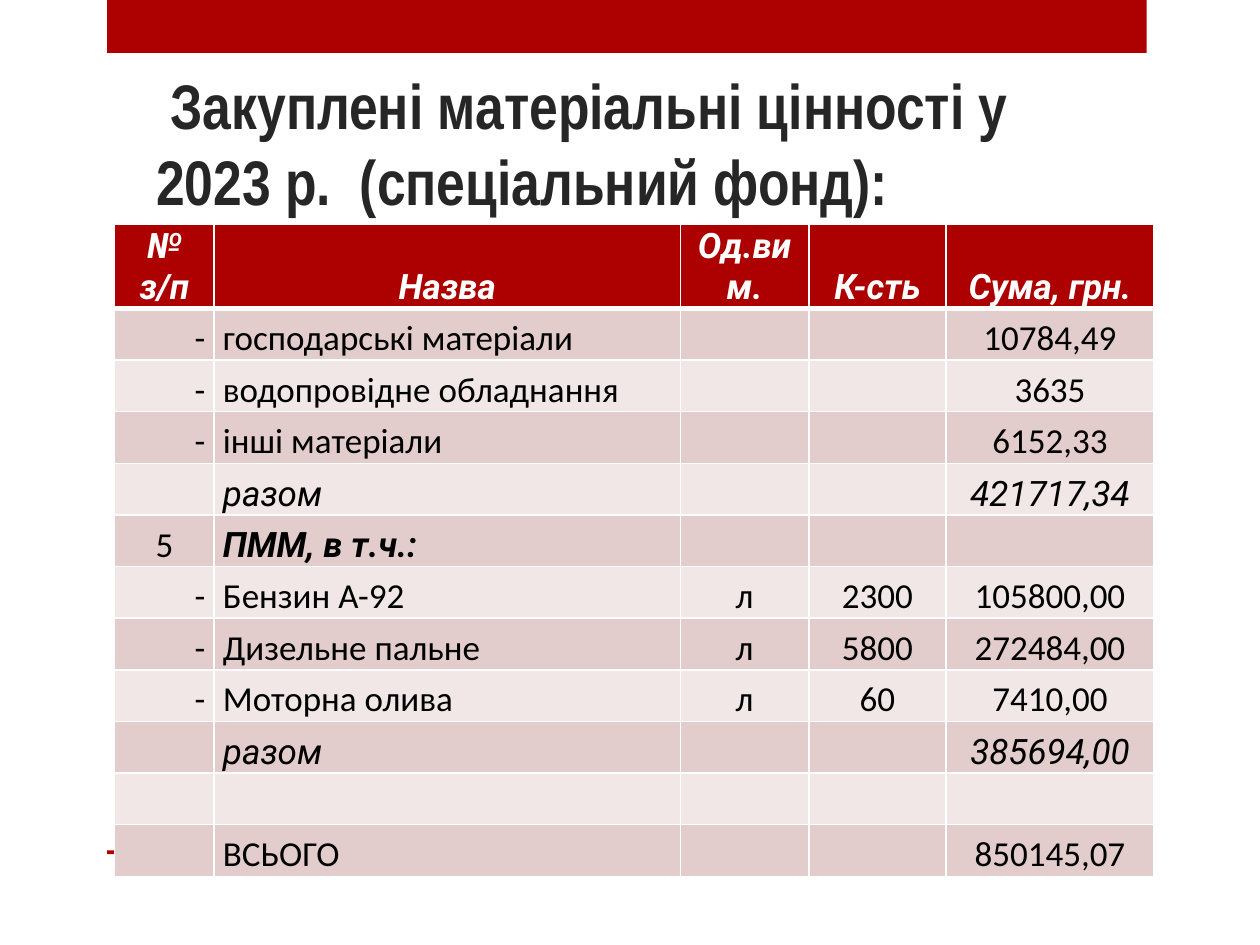
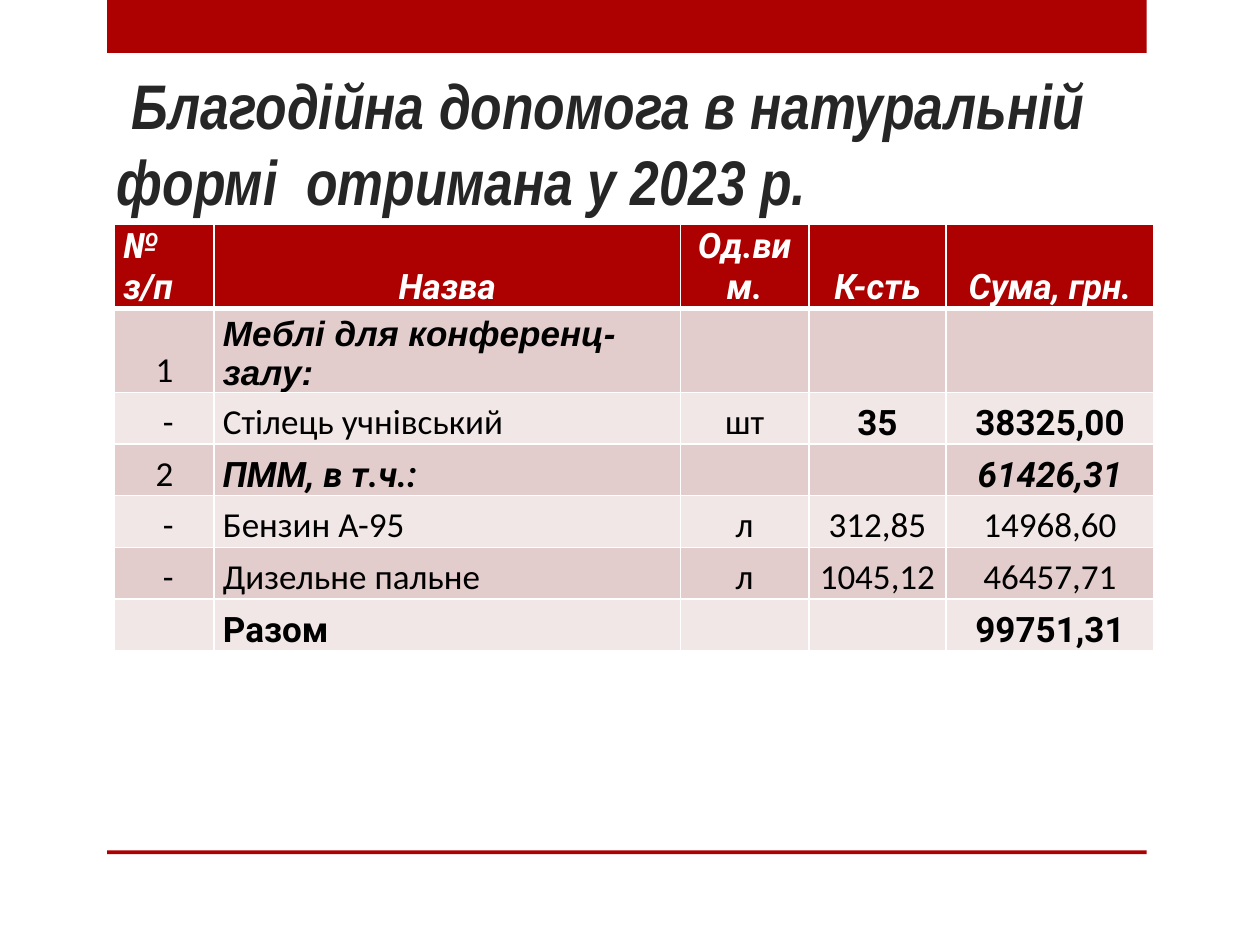
from dataclasses import dataclass

from lxml.etree import SubElement
from pptx import Presentation
from pptx.dml.color import RGBColor
from pptx.enum.shapes import MSO_SHAPE
from pptx.enum.text import MSO_ANCHOR, PP_ALIGN
from pptx.oxml.ns import qn
from pptx.util import Inches, Pt

RED = RGBColor(0xAD, 0x01, 0x01)
WHITE = RGBColor(0xFF, 0xFF, 0xFF)
BLACK = RGBColor(0x00, 0x00, 0x00)
DARK = RGBColor(0x26, 0x26, 0x26)
ROSE = RGBColor(0xE3, 0xCC, 0xCC)
PALE = RGBColor(0xF1, 0xE7, 0xE7)

RECT = MSO_SHAPE.RECTANGLE
LOW = MSO_ANCHOR.BOTTOM
LEFT, MID, RIGHT = PP_ALIGN.LEFT, PP_ALIGN.CENTER, PP_ALIGN.RIGHT

EDGE, WIDTH = 0.85, 8.25
GRID_LEFT, GRID_TOP, ROW_TALL = 0.91, 1.78, 0.41
COLS = (0.79, 3.7, 1.02, 1.09, 1.65)
HEADS = ("№ з/п", "Назва", "Од.вим.", "К-сть", "Сума, грн.")


@dataclass(frozen=True)
class Face:
    font: str
    bold: bool = False
    slant: bool = False


PLAIN = Face("Calibri")
STRONG = Face("Roboto", bold=True)
SLANT = Face("Roboto", slant=True)
HEAD = Face("Roboto", bold=True, slant=True)
ARIAL = Face("Arial", bold=True, slant=True)


@dataclass(frozen=True)
class Row:
    mark: str = ""
    name: str = ""
    unit: str = ""
    count: str = ""
    total: str = ""
    name_face: Face = PLAIN
    count_face: Face = PLAIN
    total_face: Face = PLAIN

    def items(self) -> list:
        return [
            (self.mark, PLAIN),
            (self.name, self.name_face),
            (self.unit, PLAIN),
            (self.count, self.count_face),
            (self.total, self.total_face),
        ]


@dataclass(frozen=True)
class Page:
    title: str
    left: float
    width: float
    face: Face
    head_align: int
    dash_align: int
    rows: tuple


PAGES = (
    Page(
        "Закуплені матеріальні цінності у 2023 р.  (спеціальний фонд):",
        1.14, 7.42, Face("Arial Narrow", bold=True), MID, RIGHT,
        (
            Row(" -", "господарські матеріали", total="10784,49"),
            Row(" -", "водопровідне обладнання", total="3635"),
            Row(" -", "інші матеріали", total="6152,33"),
            Row(name="разом", total="421717,34", name_face=SLANT, total_face=SLANT),
            Row("5", "ПММ, в т.ч.:", name_face=HEAD),
            Row(" -", "Бензин А-92", "л", "2300", "105800,00"),
            Row(" -", "Дизельне пальне", "л", "5800", "272484,00"),
            Row(" -", "Моторна олива", "л", "60", "7410,00"),
            Row(name="разом", total="385694,00", name_face=SLANT, total_face=SLANT),
            Row(),
            Row(name="ВСЬОГО", total="850145,07"),
        ),
    ),
    Page(
        "Благодійна допомога в натуральній формі  отримана у 2023 р.",
        0.83, 8.35, Face("Arial Narrow", bold=True, slant=True), LEFT, MID,
        (
            Row("1", "Меблі для конференц-залу:", name_face=ARIAL),
            Row(" -", "Стілець учнівський", "шт", "35", "38325,00",
                count_face=STRONG, total_face=STRONG),
            Row("2", "ПММ, в т.ч.:", total="61426,31", name_face=HEAD, total_face=HEAD),
            Row(" -", "Бензин А-95", "л", "312,85", "14968,60"),
            Row(" -", "Дизельне пальне", "л", "1045,12", "46457,71"),
            Row(name="Разом", total="99751,31", name_face=STRONG, total_face=STRONG),
        ),
    ),
)


def style(font, face: Face, size: int, color: RGBColor) -> None:
    font.name = face.font
    font.size = Pt(size)
    font.bold = face.bold
    font.italic = face.slant
    font.color.rgb = color


def add_band(slide, top: float, height: float) -> None:
    band = slide.shapes.add_shape(
        RECT, Inches(EDGE), Inches(top), Inches(WIDTH), Inches(height))
    band.shadow.inherit = False
    band.fill.solid()
    band.fill.fore_color.rgb = RED
    band.line.fill.background()


def add_title(slide, page: Page) -> None:
    box = slide.shapes.add_textbox(
        Inches(page.left), Inches(0.52), Inches(page.width), Inches(1.26))
    frame = box.text_frame
    frame.word_wrap = True
    frame.vertical_anchor = LOW
    frame.text = " " + page.title
    style(frame.paragraphs[0].runs[0].font, page.face, 36, DARK)


def add_edges(cell, top: int, base: int) -> None:
    props = cell._tc.get_or_add_tcPr()
    sides = (("L", 1), ("R", 1), ("T", top), ("B", base))
    for spot, (side, width) in enumerate(sides):
        line = SubElement(props, qn(f"a:ln{side}"), w=str(Pt(width)))
        fill = SubElement(line, qn("a:solidFill"))
        SubElement(fill, qn("a:srgbClr"), val=str(WHITE))
        props.insert(spot, line)


def fill_cell(cell, text: str, face: Face, align: int,
              color: RGBColor, back: RGBColor) -> None:
    cell.margin_left = cell.margin_right = Inches(0.07)
    cell.margin_top = cell.margin_bottom = 0
    cell.vertical_anchor = LOW
    cell.fill.solid()
    cell.fill.fore_color.rgb = back
    if text:
        cell.text_frame.text = text
        para = cell.text_frame.paragraphs[0]
        para.alignment = align
        style(para.runs[0].font, face, 20, color)


def add_grid(slide, page: Page) -> None:
    count = len(page.rows) + 1
    grid = slide.shapes.add_table(
        count, len(COLS), Inches(GRID_LEFT), Inches(GRID_TOP),
        Inches(WIDTH), Inches(ROW_TALL * count)).table
    grid.horz_banding = False
    for col, width in zip(grid.columns, COLS):
        col.width = Inches(width)
    for row in grid.rows:
        row.height = Inches(ROW_TALL)

    for col, text in enumerate(HEADS):
        cell = grid.cell(0, col)
        align = MID if col else page.head_align
        fill_cell(cell, text, HEAD, align, WHITE, RED)
        add_edges(cell, 1, 3)

    for line, row in enumerate(page.rows, 1):
        back = ROSE if line % 2 else PALE
        mark = page.dash_align if row.mark == " -" else MID
        aligns = (mark, LEFT, MID, MID, MID)
        for col, ((text, face), align) in enumerate(zip(row.items(), aligns)):
            cell = grid.cell(line, col)
            fill_cell(cell, text, face, align, BLACK, back)
            add_edges(cell, 3 if line == 1 else 1, 1)


def main() -> None:
    deck = Presentation()
    deck.slide_width = Inches(10)
    deck.slide_height = Inches(7.5)
    for page in PAGES:
        slide = deck.slides.add_slide(deck.slide_layouts[6])
        add_band(slide, 0, 0.42)
        add_band(slide, 6.75, 0.03)
        add_title(slide, page)
        add_grid(slide, page)
    deck.save("out.pptx")


if __name__ == "__main__":
    main()
